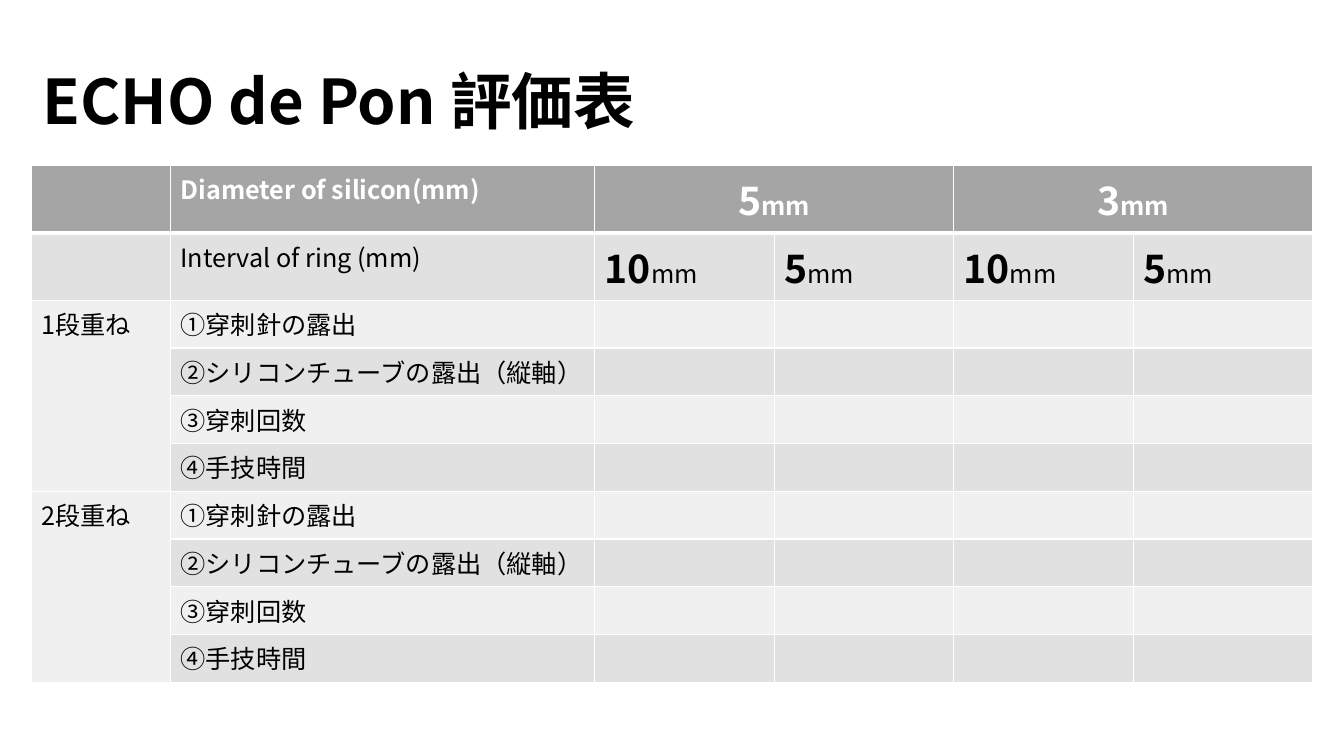
"""Build the ECHO de Pon evaluation sheet slide."""
from dataclasses import dataclass

from lxml.etree import SubElement
from pptx import Presentation
from pptx.dml.color import RGBColor
from pptx.enum.text import MSO_ANCHOR, MSO_AUTO_SIZE, PP_ALIGN
from pptx.oxml.ns import qn
from pptx.util import Inches, Pt

FONT = "Noto Sans CJK JP"
COLORS = {"head": "A5A5A5", "dark": "E1E1E1", "light": "F0F0F0",
          "line": "FFFFFF", "ink": "000000"}
FORMATS = {
    "title": {"size": Pt(44), "bold": True},
    "number": {"size": Pt(28), "bold": True},
    "strong": {"size": Pt(18), "bold": True},
    "plain": {"size": Pt(18), "bold": False},
}
COL_SHARES = [10.35, 31.58] + [13.35] * 4
ROW_SHARES = [8.93] * 2 + [6.32] * 8
ITEMS = ["①穿刺針の露出", "②シリコンチューブの露出（縦軸）", "③穿刺回数", "④手技時間"]
LAYERS = ["1段重ね", "2段重ね"]
DIAMETERS = ["5", "3"]
INTERVALS = ["10", "5"]


@dataclass
class Entry:
    row: int
    col: int
    runs: list[tuple[str, str]]
    row_span: int = 1
    col_span: int = 1
    align: PP_ALIGN = PP_ALIGN.LEFT


def add_run(p, text: str, style: str, color: str) -> None:
    r = p.add_run()
    r.text = text
    for name, value in FORMATS[style].items():
        setattr(r.font, name, value)
    r.font.color.rgb = RGBColor.from_string(COLORS[color])
    r.font.name = FONT
    SubElement(r.font._element, qn("a:ea"), typeface=FONT)


def add_border(cell, side: str, width: float) -> None:
    ln = SubElement(cell._tc.get_or_add_tcPr(), qn(f"a:ln{side}"), w=str(Pt(width)))
    SubElement(SubElement(ln, qn("a:solidFill")), qn("a:srgbClr"), val=COLORS["line"])


def paint_cell(cell, row: int) -> None:
    for side in "LRTB":
        under_head = (row, side) in {(0, "B"), (1, "T")}
        add_border(cell, side, 3 if under_head else 1)
    shade = "head" if row == 0 else "dark" if row % 2 else "light"
    cell.fill.solid()
    cell.fill.fore_color.rgb = RGBColor.from_string(COLORS[shade])


def list_entries() -> list[Entry]:
    entries = [Entry(0, 1, [("Diameter of silicon(mm)", "strong")]),
               Entry(1, 1, [("Interval of ring (mm)", "plain")])]
    for d, diameter in enumerate(DIAMETERS):
        col = 2 + d * len(INTERVALS)
        entries.append(Entry(0, col, [(diameter, "number"), ("mm", "strong")],
                             col_span=len(INTERVALS), align=PP_ALIGN.CENTER))
        entries += [Entry(1, col + i, [(interval, "number"), ("mm", "plain")])
                    for i, interval in enumerate(INTERVALS)]
    for n, layer in enumerate(LAYERS):
        row = 2 + n * len(ITEMS)
        entries.append(Entry(row, 0, [(layer, "plain")], row_span=len(ITEMS)))
        entries += [Entry(row + i, 1, [(item, "plain")]) for i, item in enumerate(ITEMS)]
    return entries


def main() -> None:
    prs = Presentation()
    prs.slide_width, prs.slide_height = Inches(13.33), Inches(7.5)

    def x(share: float) -> int:
        return int(prs.slide_width * share / 100)

    def y(share: float) -> int:
        return int(prs.slide_height * share / 100)

    s = prs.slides.add_slide(prs.slide_layouts[5])
    title = s.shapes.title
    place = {"left": x(2.4), "top": y(7.6), "width": x(51.6), "height": y(11.2)}
    for name, value in place.items():
        setattr(title, name, value)
    tf = title.text_frame
    frame = {"word_wrap": True, "auto_size": MSO_AUTO_SIZE.NONE,
             "vertical_anchor": MSO_ANCHOR.MIDDLE}
    for name, value in frame.items():
        setattr(tf, name, value)
    p = tf.paragraphs[0]
    p.alignment = PP_ALIGN.LEFT
    add_run(p, "ECHO de Pon 評価表", "title", "ink")

    table = s.shapes.add_table(len(ROW_SHARES), len(COL_SHARES), x(2.33), y(21.87),
                               x(sum(COL_SHARES)), y(sum(ROW_SHARES))).table
    for column, share in zip(table.columns, COL_SHARES):
        column.width = x(share)
    for n, (row, share) in enumerate(zip(table.rows, ROW_SHARES)):
        row.height = y(share)
        for cell in row.cells:
            paint_cell(cell, n)

    for e in list_entries():
        cell = table.cell(e.row, e.col)
        if e.row_span * e.col_span > 1:
            cell.merge(table.cell(e.row + e.row_span - 1, e.col + e.col_span - 1))
        p = cell.text_frame.paragraphs[0]
        p.alignment = e.align
        for text, style in e.runs:
            add_run(p, text, style, "line" if e.row == 0 else "ink")

    prs.save("out.pptx")


if __name__ == "__main__":
    main()
